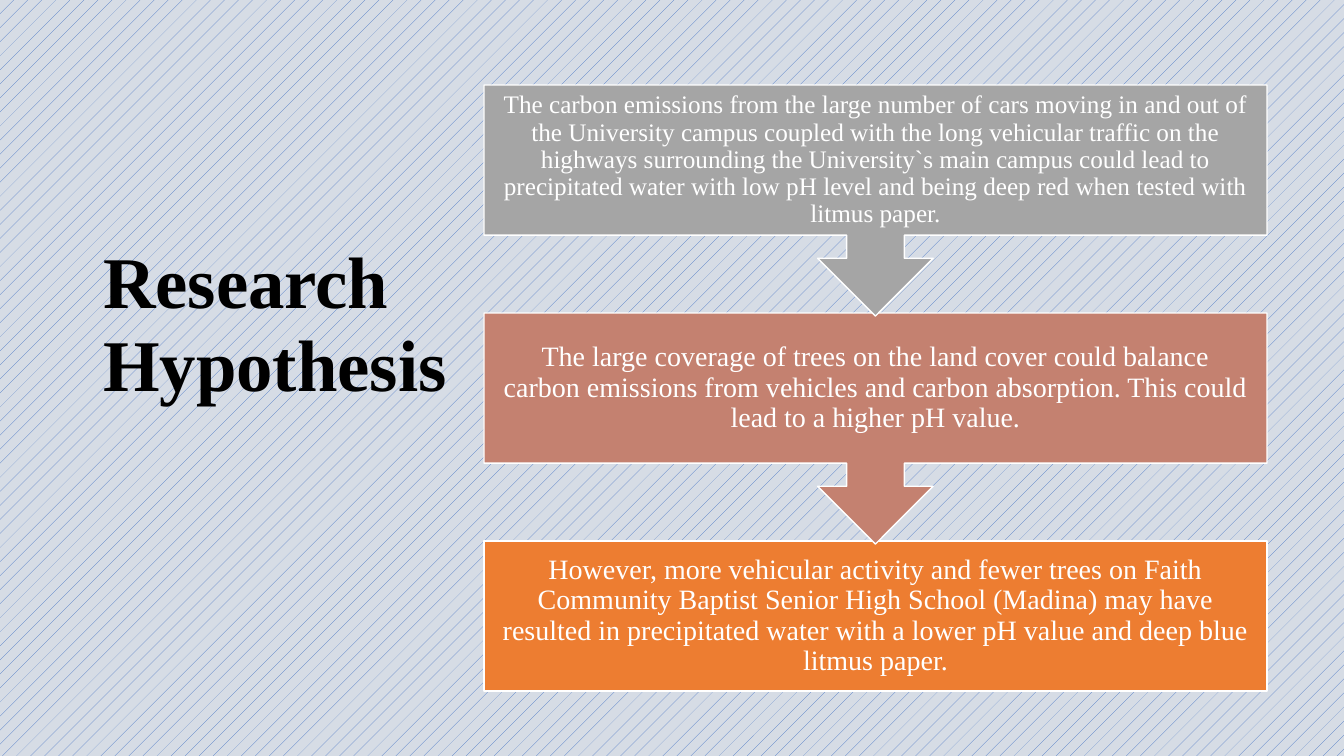
from dataclasses import dataclass

from pptx import Presentation
from pptx.dml.color import RGBColor
from pptx.enum.dml import MSO_PATTERN
from pptx.enum.shapes import MSO_SHAPE
from pptx.enum.text import MSO_ANCHOR, MSO_AUTO_SIZE, PP_ALIGN
from pptx.util import Emu, Pt

TITLE = "Research Hypothesis"
# text, fill, type size, padding in px
STEPS = [
    ("The carbon emissions from the large number of cars moving in and out of the "
     "University campus coupled with the long vehicular traffic on the highways "
     "surrounding the University`s main campus could lead to precipitated water with "
     "low pH level and being deep red when tested with litmus paper.",
     "gray", "small", 14),
    ("The large coverage of trees on the land cover could balance carbon emissions "
     "from vehicles and carbon absorption. This could lead to a higher pH value.",
     "rose", "body", 16),
    ("However, more vehicular activity and fewer trees on Faith Community Baptist "
     "Senior High School (Madina) may have resulted in precipitated water with a "
     "lower pH value and deep blue litmus paper.",
     "orange", "body", 16),
]


@dataclass(frozen=True)
class Theme:
    font: str = "Times New Roman"
    title: int = 52
    body: int = 20
    small: int = 18
    black: str = "000000"
    white: str = "FFFFFF"
    gray: str = "A5A5A5"
    rose: str = "C48170"
    orange: str = "ED7D31"
    stripe: str = "4472C4"
    paper: str = "D6DCE5"


THEME = Theme()
PX = 9071  # EMU per px at 100.8 px to the inch
TITLE_BOX = (93, 61, 372, 529)
STEP_LEFT, STEP_TOP, STEP_WIDTH = 484, 85, 783
STEP_PITCH, BOX_HEIGHT, CALLOUT_HEIGHT = 228, 150, 231


def px(value):
    return Emu(value * PX)


def color(name):
    return RGBColor.from_string(getattr(THEME, name))


def write(shape, text, *, size, fill, bold=False, align=PP_ALIGN.LEFT,
          spacing=0.9, padding=None):
    tf = shape.text_frame
    tf.word_wrap = True
    tf.auto_size = MSO_AUTO_SIZE.NONE
    tf.vertical_anchor = MSO_ANCHOR.MIDDLE
    if padding is not None:
        tf.margin_left = tf.margin_right = px(padding)
        tf.margin_top = tf.margin_bottom = px(padding)
    p = tf.paragraphs[0]
    p.alignment = align
    p.line_spacing = spacing
    r = p.add_run()
    r.text = text
    r.font.name = THEME.font
    r.font.size = Pt(getattr(THEME, size))
    r.font.bold = bold
    r.font.color.rgb = color(fill)


def add_step(s, index):
    """Draw one step; every step but the last points down to the next."""
    text, fill, size, padding = STEPS[index]
    last = index == len(STEPS) - 1
    kind = MSO_SHAPE.RECTANGLE if last else MSO_SHAPE.DOWN_ARROW_CALLOUT
    height = BOX_HEIGHT if last else CALLOUT_HEIGHT
    sp = s.shapes.add_shape(kind, px(STEP_LEFT), px(STEP_TOP + index * STEP_PITCH),
                            px(STEP_WIDTH), px(height))
    sp.shadow.inherit = False
    sp.fill.solid()
    sp.fill.fore_color.rgb = color(fill)
    sp.line.color.rgb = color("white")
    sp.line.width = Pt(1)
    write(sp, text, size=size, fill="white", align=PP_ALIGN.CENTER, padding=padding)


def main():
    prs = Presentation()
    prs.slide_width, prs.slide_height = px(1344), px(756)
    s = prs.slides.add_slide(prs.slide_layouts[5])

    background = s.background.fill
    background.patterned()
    background.pattern = MSO_PATTERN.PERCENT_5
    background.fore_color.rgb = color("stripe")
    background.back_color.rgb = color("paper")

    title = s.shapes.title
    title.left, title.top, title.width, title.height = map(px, TITLE_BOX)
    write(title, TITLE, size="title", fill="black", bold=True, spacing=0.95)

    for index in reversed(range(len(STEPS))):
        add_step(s, index)

    prs.save("out.pptx")


if __name__ == "__main__":
    main()
